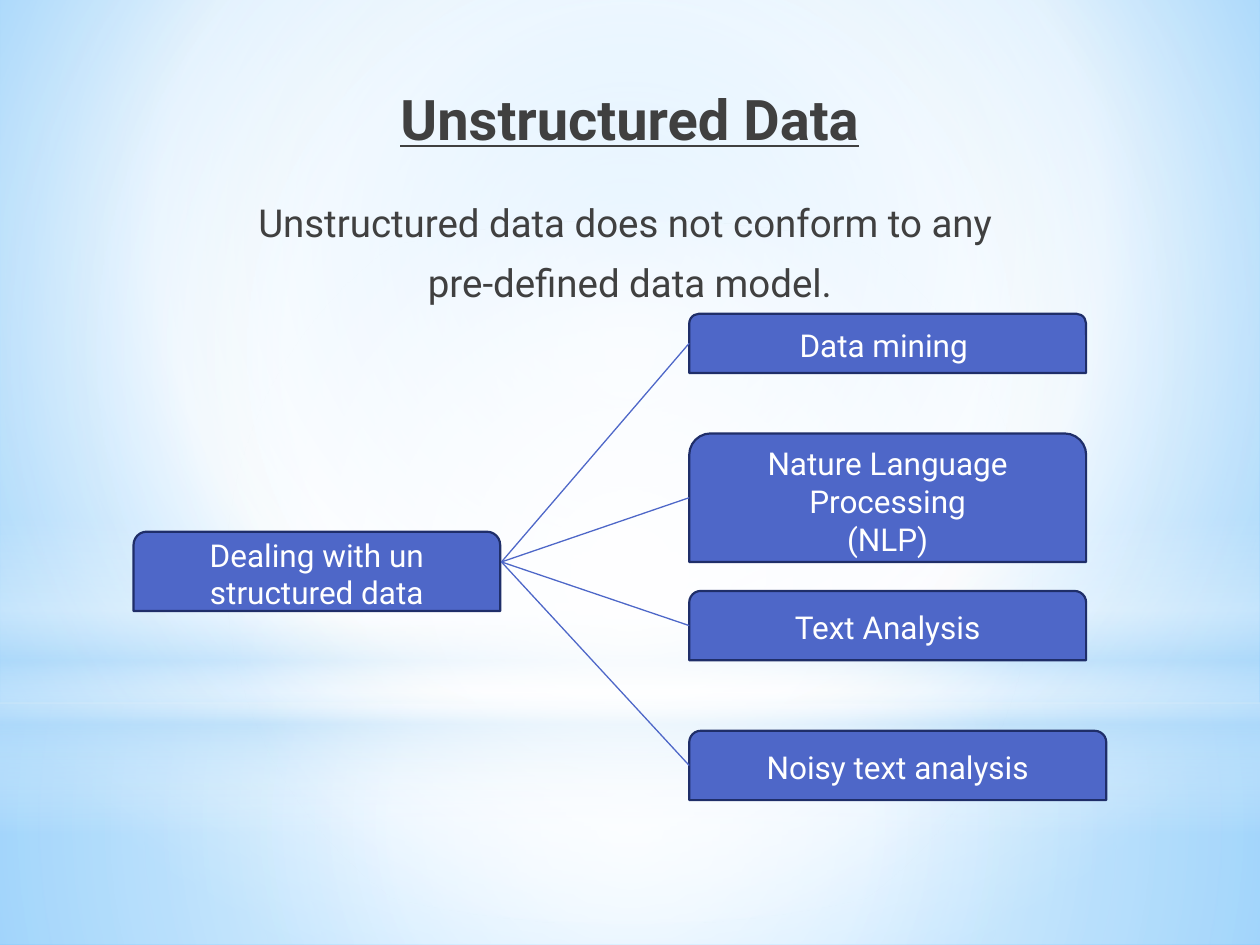
from dataclasses import dataclass

from lxml import etree
from pptx import Presentation
from pptx.dml.color import RGBColor
from pptx.enum.shapes import MSO_CONNECTOR, MSO_SHAPE
from pptx.enum.text import MSO_ANCHOR, PP_ALIGN
from pptx.oxml import parse_xml
from pptx.oxml.ns import nsdecls, qn
from pptx.util import Inches, Pt

FONT = "Roboto"
WHITE = RGBColor(0xFF, 0xFF, 0xFF)
PALE = RGBColor(0xB4, 0xDC, 0xFA)
SKY = RGBColor(0x9E, 0xD5, 0xFF)
AZURE = RGBColor(0x5B, 0xB9, 0xFF)
INK = RGBColor(0x40, 0x40, 0x40)
INDIGO = RGBColor(0x4E, 0x67, 0xC8)
NAVY = RGBColor(0x1F, 0x2E, 0x69)


@dataclass
class Stop:
    position: int
    color: RGBColor
    alpha: int = 100


@dataclass
class Glow:
    preset: MSO_SHAPE
    top: float
    height: float
    stops: list[Stop]
    center: tuple[int, ...] | None = (50, 50, 50, 50)  # None: top to bottom


@dataclass
class Topic:
    lines: list[str]
    left: float
    top: float
    width: float
    height: float


BACKDROP = [Stop(0, SKY), Stop(60, WHITE), Stop(100, AZURE)]
GLOWS = [
    Glow(MSO_SHAPE.RECTANGLE, 5.58, 1.92,
         [Stop(0, WHITE, 91), Stop(37, WHITE, 76), Stop(100, PALE, 79)]),
    Glow(MSO_SHAPE.RECTANGLE, 0, 5.58,
         [Stop(0, WHITE, 89), Stop(48, WHITE, 62), Stop(100, PALE, 79)]),
    Glow(MSO_SHAPE.RECTANGLE, 4.12, 2.5,
         [Stop(0, WHITE, 0), Stop(29, WHITE, 30), Stop(45, PALE, 40),
          Stop(55, WHITE, 26), Stop(65, PALE, 60), Stop(100, WHITE, 0)], None),
    Glow(MSO_SHAPE.OVAL, 1.75, 5.58, [Stop(0, WHITE), Stop(56, WHITE, 0)]),
]
ROOT = Topic(["Dealing with un structured data"], 1.06, 4.22, 2.91, 0.63)
BRANCHES = [
    Topic(["Data mining "], 5.47, 2.49, 3.15, 0.47),
    Topic(["Nature Language Processing", "(NLP)"], 5.47, 3.44, 3.15, 1.02),
    Topic(["Text Analysis"], 5.47, 4.69, 3.15, 0.55),
    Topic(["Noisy text analysis"], 5.47, 5.8, 3.31, 0.55),
]
FAN_X, FAN_Y = 3.98, 4.46  # where the branch lines start


def set_gradient(parent, stops: list[Stop], center: tuple[int, ...] | None) -> None:
    """Replace the solid fill inside parent with a gradient."""
    marks = "".join(
        f'<a:gs pos="{s.position * 1000}"><a:srgbClr val="{s.color}">'
        f'<a:alpha val="{s.alpha * 1000}"/></a:srgbClr></a:gs>' for s in stops)
    if center is None:
        shade = '<a:lin ang="5400000" scaled="0"/>'
    else:
        left, top, right, bottom = (c * 1000 for c in center)
        shade = (f'<a:path path="circle"><a:fillToRect l="{left}" t="{top}" '
                 f'r="{right}" b="{bottom}"/></a:path>')
    gradient = parse_xml(f'<a:gradFill {nsdecls("a")} rotWithShape="1">'
                         f'<a:gsLst>{marks}</a:gsLst>{shade}</a:gradFill>')
    parent.replace(parent.find(qn("a:solidFill")), gradient)


def add_glow(slide, glow: Glow) -> None:
    shape = slide.shapes.add_shape(glow.preset, 0, Inches(glow.top),
                                   Inches(10), Inches(glow.height))
    shape.shadow.inherit = False
    shape.line.fill.background()
    shape.fill.solid()
    set_gradient(shape.element.spPr, glow.stops, glow.center)


def write(frame, lines: list[str], size: int, color: RGBColor) -> None:
    frame.word_wrap = True
    for index, line in enumerate(lines):
        paragraph = frame.add_paragraph() if index else frame.paragraphs[0]
        paragraph.text = line
        paragraph.alignment = PP_ALIGN.CENTER
        paragraph.font.name = FONT
        paragraph.font.size = Pt(size)
        paragraph.font.color.rgb = color


def add_text(slide, top: float, height: float, lines: list[str], size: int):
    box = slide.shapes.add_textbox(Inches(0.5), Inches(top), Inches(9), Inches(height))
    box.text_frame.margin_top = Inches(0.08)
    write(box.text_frame, lines, size, INK)
    return box.text_frame.paragraphs


def add_topic(slide, topic: Topic) -> None:
    shape = slide.shapes.add_shape(
        MSO_SHAPE.ROUND_2_SAME_RECTANGLE, Inches(topic.left), Inches(topic.top),
        Inches(topic.width), Inches(topic.height))
    shape.shadow.inherit = False
    shape.fill.solid()
    shape.fill.fore_color.rgb = INDIGO
    shape.line.color.rgb = NAVY
    shape.line.width = Pt(1.25)
    shape.text_frame.vertical_anchor = MSO_ANCHOR.MIDDLE
    write(shape.text_frame, topic.lines, 18, WHITE)


def add_link(slide, topic: Topic) -> None:
    link = slide.shapes.add_connector(
        MSO_CONNECTOR.STRAIGHT, Inches(FAN_X), Inches(FAN_Y),
        Inches(topic.left), Inches(topic.top + topic.height / 2))
    link.line.color.rgb = INDIGO
    link.line.width = Pt(0.75)
    etree.SubElement(link.element.spPr, qn("a:effectLst"))


def main() -> None:
    deck = Presentation()
    deck.slide_width, deck.slide_height = Inches(10), Inches(7.5)
    slide = deck.slides.add_slide(deck.slide_layouts[6])

    # Background and its light effects
    slide.background.fill.solid()
    set_gradient(slide.element.find(f".//{qn('p:bgPr')}"), BACKDROP, (20, 10, 20, 60))
    for glow in GLOWS:
        add_glow(slide, glow)

    # Title and definition
    title = add_text(slide, 0.59, 0.78, ["Unstructured Data"], 32)[0]
    title.font.bold = True
    title.font.underline = True
    definition = add_text(slide, 1.5, 5.33, [
        "Unstructured data does not conform to any ", "pre-defined data model."], 22)
    for paragraph in definition:
        paragraph.space_after = Pt(3)
    definition[1].space_before = Pt(5)

    # Topic tree
    for topic in [ROOT, *BRANCHES]:
        add_topic(slide, topic)
    for branch in reversed(BRANCHES):
        add_link(slide, branch)

    deck.save("out.pptx")


if __name__ == "__main__":
    main()
